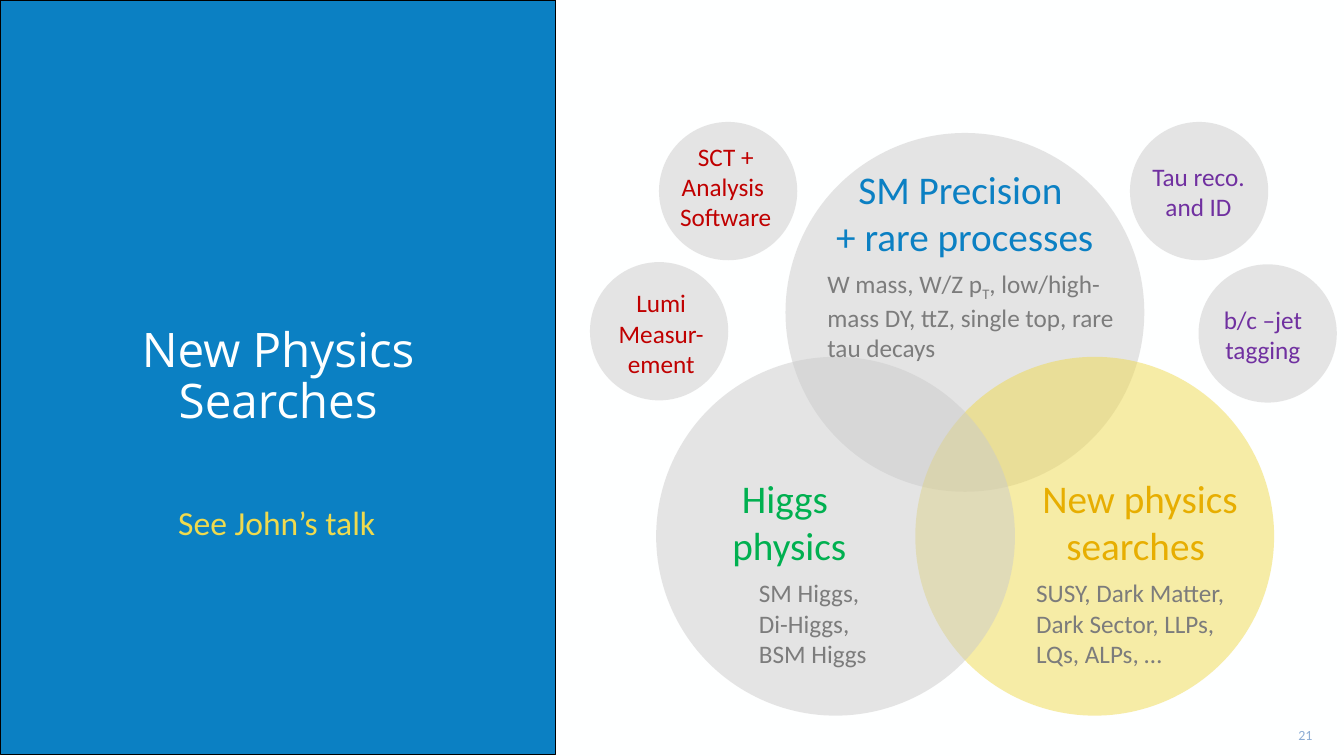
from dataclasses import dataclass

from lxml import etree
from pptx import Presentation
from pptx.dml.color import RGBColor
from pptx.enum import shapes, text
from pptx.oxml import ns
from pptx.util import Pt


@dataclass(frozen=True)
class Theme:
    background: str = "FEFFFF"
    blue: str = "0B80C3"
    black: str = "000000"
    grey: str = "CBCBCB"
    yellow: str = "EFDA4E"
    detail: str = "7C7C7C"
    green: str = "00B050"
    gold: str = "E7AE01"
    red: str = "C00000"
    purple: str = "7030A0"
    number: str = "8CACD4"
    body_font: str = "Calibri"
    title_font: str = "Open Sans"
    title_size: int = 34
    heading_size: int = 28
    link_size: int = 24
    detail_size: int = 18
    number_size: int = 10


THEME = Theme()
LEFT, CENTER, RIGHT = text.PP_ALIGN.LEFT, text.PP_ALIGN.CENTER, text.PP_ALIGN.RIGHT
TOP, MIDDLE = text.MSO_ANCHOR.TOP, text.MSO_ANCHOR.MIDDLE
VENN_DIAMETER = 256.3
TOPIC_DIAMETER = 98.8


def set_values(target, values):
    for name, value in values.items():
        setattr(target, name, value)


def set_fill(shape, color, opacity=100):
    shape.shadow.inherit = False
    shape.fill.solid()
    shape.fill.fore_color.rgb = RGBColor.from_string(color)
    if opacity < 100:
        rgb = shape.fill._xPr.find(".//" + ns.qn("a:srgbClr"))
        etree.SubElement(rgb, ns.qn("a:alpha"), val=str(opacity * 1000))


def write(shape, wording, size, color, font=THEME.body_font, align=CENTER,
          anchor=TOP, spacing=1.0, wrap=True):
    """Fill a shape with one paragraph; bars enclose subscripts, newlines break lines."""
    frame = shape.text_frame
    set_values(frame, {"word_wrap": wrap, "vertical_anchor": anchor})
    paragraph = frame.paragraphs[0]
    set_values(paragraph, {"alignment": align, "line_spacing": spacing})
    for row, line in enumerate(wording.split("\n")):
        if row:
            paragraph.add_line_break()
        for part, words in enumerate(line.split("|")):
            run = paragraph.add_run()
            run.text = words
            set_values(run.font, {"size": Pt(size), "name": font})
            run.font.color.rgb = RGBColor.from_string(color)
            if part % 2:
                run.font._element.set("baseline", "-25000")


def add_label(slide, box, wording, size, color, **style):
    label = slide.shapes.add_textbox(*map(Pt, box))
    write(label, wording, size, color, **style)


def add_circle(slide, left, top, diameter, color):
    circle = slide.shapes.add_shape(
        shapes.MSO_SHAPE.OVAL, *map(Pt, (left, top, diameter, diameter)))
    set_fill(circle, color, opacity=50)
    circle.line.fill.background()


def add_title_panel(slide):
    panel = slide.shapes.add_shape(
        shapes.MSO_SHAPE.RECTANGLE, *map(Pt, (0.7, 0, 396, 539.3)))
    set_fill(panel, THEME.blue)
    panel.line.color.rgb = RGBColor.from_string(THEME.black)
    panel.line.width = Pt(0.75)
    write(panel, "New Physics\nSearches", THEME.title_size, THEME.background,
          font=THEME.title_font, anchor=MIDDLE, spacing=0.9)


def add_venn(slide):
    for left, top, color in (
        (561.1, 95, THEME.grey),
        (653.8, 254.9, THEME.yellow),
        (468.7, 254.9, THEME.grey),
    ):
        add_circle(slide, left, top, VENN_DIAMETER, color)

    fields = (
        ((535, 114.5, 308.2, 75), "SM Precision \n+ rare processes", THEME.blue,
         (583.9, 187.9, 241.2, 72.7),
         "W mass, W/Z p|T|, low/high-mass DY, ttZ, single top, rare tau decays"),
        ((409.7, 335.5, 308.2, 75), "Higgs \nphysics", THEME.green,
         (535, 409, 122.4, 72.7), "SM Higgs, \nDi-Higgs,\nBSM Higgs"),
        ((735.1, 335.5, 158.4, 75), "New physics searches ", THEME.gold,
         (733, 409, 184.3, 72.7),
         "SUSY, Dark Matter, Dark Sector, LLPs, \nLQs, ALPs, …"),
    )
    for heading_box, heading, color, detail_box, detail in fields:
        add_label(slide, heading_box, heading, THEME.heading_size, color)
        add_label(slide, detail_box, detail, THEME.detail_size, THEME.detail,
                  align=LEFT)


def add_topics(slide):
    for left, top, label_box, wording, color in (
        (807.1, 87.1, (812.2, 111.6, 87.8, 51), "Tau reco. and ID", THEME.purple),
        (856.1, 188.8, (858.2, 213.8, 87.8, 51), "b/c –jet tagging", THEME.purple),
        (470.7, 87.1, (474.5, 97.2, 87.8, 72.7), "SCT + Analysis \nSoftware", THEME.red),
        (421.4, 187.2, (428.4, 201.9, 87.8, 72.7), "Lumi\nMeasur-ement", THEME.red),
    ):
        add_circle(slide, left, top, TOPIC_DIAMETER, THEME.grey)
        add_label(slide, label_box, wording, THEME.detail_size, color)


def main():
    deck = Presentation()
    set_values(deck, {"slide_width": Pt(960), "slide_height": Pt(540)})
    slide = deck.slides.add_slide(deck.slide_layouts[6])
    slide.background.fill.solid()
    slide.background.fill.fore_color.rgb = RGBColor.from_string(THEME.background)

    add_title_panel(slide)
    add_label(slide, (896.4, 510.5, 48.2, 28.8), "21", THEME.number_size,
              THEME.number, align=RIGHT, anchor=MIDDLE)
    add_venn(slide)
    add_topics(slide)
    add_label(slide, (120.2, 355, 157, 36), "See John’s talk", THEME.link_size,
              THEME.yellow, align=LEFT, wrap=False)
    deck.save("out.pptx")


if __name__ == "__main__":
    main()
